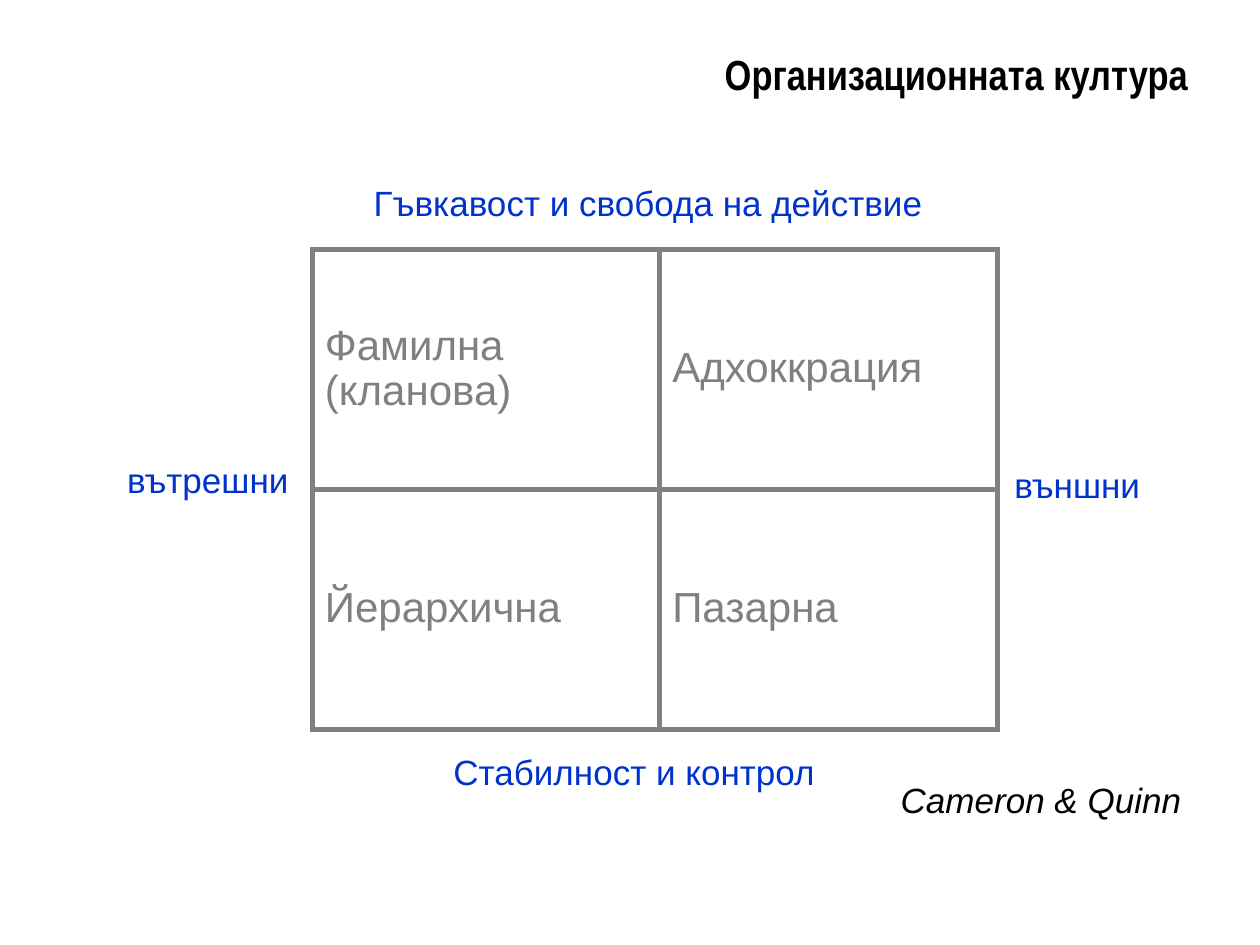
from dataclasses import dataclass

from lxml.etree import SubElement
from pptx import Presentation
from pptx.dml.color import RGBColor
from pptx.enum.text import MSO_ANCHOR as Anchor, MSO_AUTO_SIZE as AutoSize, PP_ALIGN as Align
from pptx.oxml.ns import qn
from pptx.util import Pt


@dataclass(frozen=True)
class Theme:
    black: str = "000000"
    gray: str = "808080"
    blue: str = "0033CC"
    font: str = "Arial"
    title_font: str = "Arial Narrow"
    large: int = 24
    small: int = 20
    border: int = 3


THEME = Theme()

QUADRANTS = [["Фамилна (кланова)", "Адхоккрация"], ["Йерархична", "Пазарна"]]
COLUMN_WIDTHS = [198.5, 193]
ROW_HEIGHT = 137.25

# Axis labels: text, (left, top, width, height), wrap
AXIS_LABELS = [
    ("Стабилност и контрол", (252, 425.5, 250, 31.5), True),
    ("Гъвкавост и свобода на действие", (206.5, 100, 340, 31.5), True),
    ("вътрешни", (65.5, 258.5, 107, 31.5), False),
    ("външни", (572.5, 261.5, 87, 31.5), False),
]


def style(paragraph, size, color, name=THEME.font, bold=False, italic=False):
    font = paragraph.font
    font.name, font.size = name, Pt(size)
    font.bold, font.italic = bold, italic
    font.color.rgb = RGBColor.from_string(color)


def fill_placeholder(box, text, bounds, anchor):
    box.left, box.top, box.width, box.height = map(Pt, bounds)
    frame = box.text_frame
    frame.text = text
    frame.auto_size = AutoSize.NONE
    frame.vertical_anchor = anchor
    para = frame.paragraphs[0]
    para.space_before = Pt(0)
    return para


def add_title(page, text):
    para = fill_placeholder(page.shapes.title, text, (212.5, 15, 473.5, 54), Anchor.MIDDLE)
    para.alignment = Align.RIGHT
    style(para, THEME.large, THEME.black, THEME.title_font, bold=True)


def add_source(page, text):
    para = fill_placeholder(page.placeholders[1], text, (507.5, 441.5, 185, 39.5), Anchor.TOP)
    properties = para._p.get_or_add_pPr()
    properties.set("marL", "0")
    properties.set("indent", "0")
    SubElement(properties, qn("a:buNone"))
    style(para, THEME.small, THEME.black, italic=True)


def add_label(page, text, bounds, wrap):
    frame = page.shapes.add_textbox(*map(Pt, bounds)).text_frame
    frame.word_wrap = wrap
    frame.auto_size = AutoSize.SHAPE_TO_FIT_TEXT
    frame.text = text
    style(frame.paragraphs[0], THEME.small, THEME.blue)


def set_borders(cell):
    properties = cell._tc.get_or_add_tcPr()
    for side in ("lnL", "lnR", "lnT", "lnB"):
        line = SubElement(properties, qn(f"a:{side}"), w=str(Pt(THEME.border)))
        SubElement(SubElement(line, qn("a:solidFill")), qn("a:srgbClr"), val=THEME.gray)


def add_matrix(page, left, top):
    rows, columns = len(QUADRANTS), len(COLUMN_WIDTHS)
    table = page.shapes.add_table(rows, columns, Pt(left), Pt(top),
                                  Pt(sum(COLUMN_WIDTHS)), Pt(rows * ROW_HEIGHT)).table
    table.first_row = table.horz_banding = False
    for column, width in zip(table.columns, COLUMN_WIDTHS):
        column.width = Pt(width)
    for row, texts in zip(table.rows, QUADRANTS):
        row.height = Pt(ROW_HEIGHT)
        for cell, text in zip(row.cells, texts):
            cell.text = text
            cell.vertical_anchor = Anchor.MIDDLE
            set_borders(cell)
            cell.fill.background()
            para = cell.text_frame.paragraphs[0]
            para.line_spacing = 0.95
            style(para, THEME.large, THEME.gray)


def main():
    deck = Presentation()
    deck.slide_width, deck.slide_height = Pt(720), Pt(540)
    page = deck.slides.add_slide(deck.slide_layouts[1])

    # Title and source
    add_title(page, "Организационната култура")
    add_source(page, "Cameron & Quinn")

    # Culture matrix with its axis labels
    add_matrix(page, 178.5, 142.5)
    for text, bounds, wrap in AXIS_LABELS:
        add_label(page, text, bounds, wrap)

    deck.save("out.pptx")


if __name__ == "__main__":
    main()
